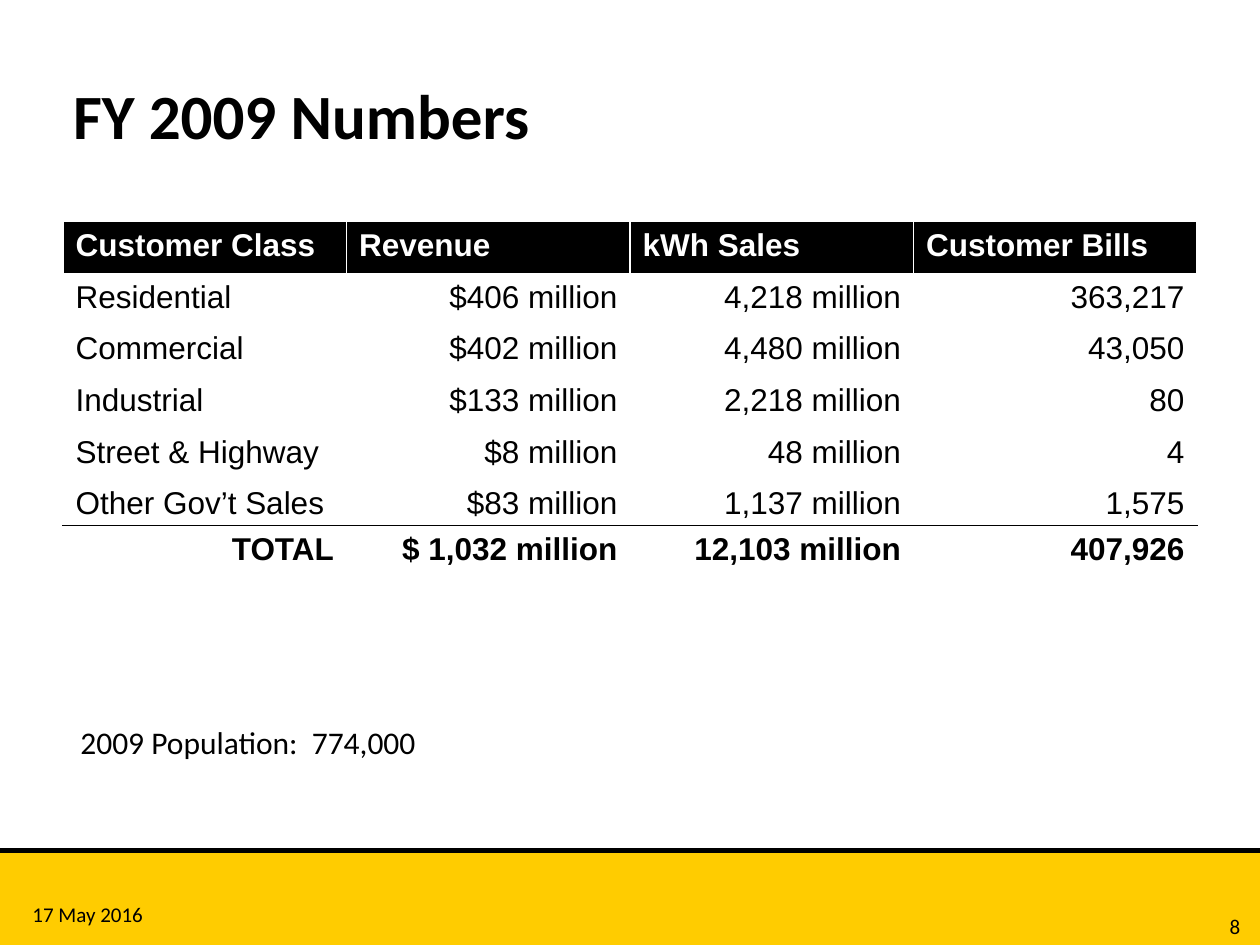
from dataclasses import dataclass

from lxml.etree import SubElement
from pptx import Presentation
from pptx.dml.color import RGBColor
from pptx.enum.shapes import MSO_CONNECTOR as Connector, MSO_SHAPE as Shape
from pptx.enum.text import MSO_ANCHOR as Anchor, MSO_AUTO_SIZE as AutoSize, PP_ALIGN as Align
from pptx.oxml.ns import qn
from pptx.slide import Slide
from pptx.table import _Cell as Cell
from pptx.text.text import TextFrame
from pptx.util import Inches, Pt

COLORS = {"black": "000000", "white": "FFFFFF", "gold": "FFCC00"}
BAND_TOP = 6.75
ROW_HEIGHT, SHORT_ROW_HEIGHT = 0.41, 0.36
HEADERS = ("Customer Class", "Revenue", "kWh Sales", "Customer Bills")


@dataclass
class Label:
    text: str
    left: float
    top: float
    width: float
    height: float
    size: int
    wrap: bool = True


@dataclass
class CustomerClass:
    name: str
    revenue: str
    sales: str
    bills: str

    def values(self) -> tuple:
        return self.name, self.revenue, self.sales, self.bills


LABELS = (
    Label("8", 9.66, 7.2, 0.41, 0.3, 12),
    Label("17 May 2016", 0.16, 7.11, 1.66, 0.3, 12),
    Label("2009 Population:  774,000", 0.54, 5.69, 2.9, 0.4, 18, wrap=False),
)
CLASSES = (
    CustomerClass("Residential", "$406 million", "4,218 million", "363,217"),
    CustomerClass("Commercial", "$402 million", "4,480 million", "43,050"),
    CustomerClass("Industrial", "$133 million", "2,218 million", "80"),
    CustomerClass("Street & Highway", "$8 million", "48 million", "4"),
    CustomerClass("Other Gov’t Sales", "$83 million", "1,137 million", "1,575"),
    CustomerClass("TOTAL", "$ 1,032 million", "12,103 million", "407,926"),
)


def color(name: str) -> RGBColor:
    return RGBColor.from_string(COLORS[name])


def write(frame: TextFrame, text: str, *, size: int, font: str = "Calibri",
          ink: str = "black", bold: bool = False, align: Align = Align.LEFT) -> None:
    para = frame.paragraphs[0]
    para.alignment = align
    span = para.add_run()
    span.text = text
    span.font.name = font
    span.font.size = Pt(size)
    span.font.bold = bold
    span.font.color.rgb = color(ink)


def add_band(slide: Slide) -> None:
    band = slide.shapes.add_shape(
        Shape.RECTANGLE, 0, Inches(BAND_TOP), Inches(10), Inches(0.75))
    band.shadow.inherit = False
    band.fill.solid()
    band.fill.fore_color.rgb = color("gold")
    band.line.color.rgb = color("gold")
    band.line.width = Pt(1.25)
    for weight in (3, 2.5):
        rule = slide.shapes.add_connector(
            Connector.STRAIGHT, 0, Inches(BAND_TOP), Inches(10), Inches(BAND_TOP))
        rule.line.color.rgb = color("black")
        rule.line.width = Pt(weight)
        SubElement(rule._element.spPr, qn("a:effectLst"))


def add_title(slide: Slide, text: str) -> None:
    title = slide.shapes.title
    title.left, title.top = Inches(0.48), Inches(0.28)
    title.width, title.height = Inches(9.03), Inches(1.25)
    title.text_frame.vertical_anchor = Anchor.MIDDLE
    write(title.text_frame, text, size=36, bold=True)


def add_label(slide: Slide, label: Label) -> None:
    box = slide.shapes.add_textbox(
        Inches(label.left), Inches(label.top), Inches(label.width), Inches(label.height))
    box.text_frame.word_wrap = label.wrap
    box.text_frame.auto_size = AutoSize.SHAPE_TO_FIT_TEXT
    write(box.text_frame, label.text, size=label.size)


def add_border(cell: Cell, side: str) -> None:
    border = SubElement(cell._tc.get_or_add_tcPr(), qn(f"a:{side}"), w=str(Pt(1)))
    fill = SubElement(border, qn("a:solidFill"))
    SubElement(fill, qn("a:srgbClr"), val=COLORS["black"])


def add_numbers(slide: Slide) -> None:
    rows = [HEADERS] + [item.values() for item in CLASSES]
    total = len(rows) - 1
    heights = [ROW_HEIGHT] * len(rows)
    heights[total - 1] = SHORT_ROW_HEIGHT
    table = slide.shapes.add_table(
        len(rows), len(HEADERS), Inches(0.5), Inches(1.76),
        Inches(9), Inches(sum(heights))).table
    table.horz_banding = False
    for column in table.columns:
        column.width = Inches(2.25)
    for row, values in enumerate(rows):
        table.rows[row].height = Inches(heights[row])
        header = row == 0
        for col, text in enumerate(values):
            cell = table.cell(row, col)
            if row == total - 1:
                cell.margin_bottom = Inches(0.01)
                add_border(cell, "lnB")
            elif row == total:
                add_border(cell, "lnT")
            cell.fill.solid()
            cell.fill.fore_color.rgb = color("black" if header else "white")
            right = row == total or (col > 0 and not header)
            write(cell.text_frame, text, size=18, font="Arial",
                  ink="white" if header else "black", bold=row in (0, total),
                  align=Align.RIGHT if right else Align.LEFT)


def main() -> None:
    deck = Presentation()
    deck.slide_width, deck.slide_height = Inches(10), Inches(7.5)
    page = deck.slides.add_slide(deck.slide_layouts[5])
    add_band(page)
    add_title(page, "FY 2009 Numbers")
    add_numbers(page)
    for label in LABELS:
        add_label(page, label)
    deck.save("out.pptx")


if __name__ == "__main__":
    main()
